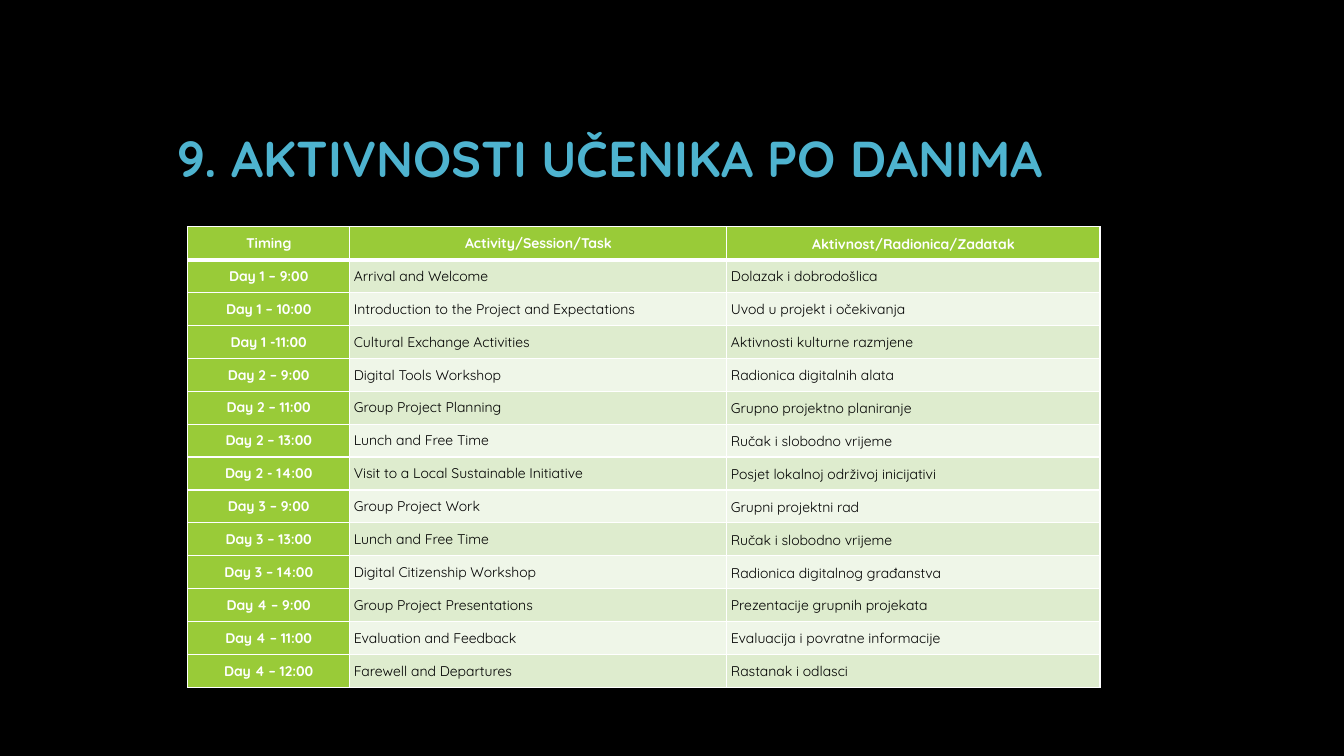
"""Build the slide with the table of student activities by day."""
from lxml import etree
from pptx import Presentation
from pptx.dml.color import RGBColor
from pptx.enum.text import MSO_ANCHOR, PP_ALIGN
from pptx.oxml.ns import qn
from pptx.util import Inches, Pt

MIDDLE, BOTTOM = MSO_ANCHOR.MIDDLE, MSO_ANCHOR.BOTTOM
LEFT, CENTER, JUSTIFY = PP_ALIGN.LEFT, PP_ALIGN.CENTER, PP_ALIGN.JUSTIFY
WHITE, BLACK, GREEN, BLUE = "FFFFFF", "000000", "99CB38", "4EB3CF"
BANDS = ["EFF6E8", "DEECCE"]


def paint(fill, color):
    fill.solid()
    fill.fore_color.rgb = RGBColor.from_string(color)


def write(frame, text, size, color, bold, align, spacing):
    para = frame.paragraphs[0]
    para.alignment, para.line_spacing = align, spacing
    run = para.add_run()
    run.text = text
    look = {"name": "Quicksand", "size": Pt(size), "bold": bold}
    for key, value in look.items():
        setattr(run.font, key, value)
    paint(run.font.fill, color)


deck = Presentation()
deck.slide_width, deck.slide_height = Inches(13.33), Inches(7.5)
slide = deck.slides.add_slide(deck.slide_layouts[6])
paint(slide.background.fill, BLACK)

title = slide.shapes.add_textbox(Inches(1.66), Inches(0.42), Inches(10), Inches(1.5))
frame = title.text_frame
frame.word_wrap = True
frame.vertical_anchor = BOTTOM
write(frame, "9. AKTIVNOSTI UČENIKA PO DANIMA", 36, BLUE, True, LEFT, 0.9)

rows = [
    ("Timing", "Activity/Session/Task", "Aktivnost/Radionica/Zadatak"),
    ("Day 1 – 9:00", "Arrival and Welcome", "Dolazak i dobrodošlica"),
    ("Day 1 – 10:00", "Introduction to the Project and Expectations", "Uvod u projekt i očekivanja"),
    ("Day 1 -11:00", "Cultural Exchange Activities", "Aktivnosti kulturne razmjene"),
    ("Day 2 – 9:00", "Digital Tools Workshop", "Radionica digitalnih alata"),
    ("Day 2 – 11:00", "Group Project Planning", "Grupno projektno planiranje"),
    ("Day 2 – 13:00", "Lunch and Free Time", "Ručak i slobodno vrijeme"),
    ("Day 2 - 14:00", "Visit to a Local Sustainable Initiative", "Posjet lokalnoj održivoj inicijativi"),
    ("Day 3 – 9:00", "Group Project Work", "Grupni projektni rad"),
    ("Day 3 – 13:00", "Lunch and Free Time", "Ručak i slobodno vrijeme"),
    ("Day 3 – 14:00", "Digital Citizenship Workshop", "Radionica digitalnog građanstva"),
    ("Day 4 – 9:00", "Group Project Presentations", "Prezentacije grupnih projekata"),
    ("Day 4 – 11:00", "Evaluation and Feedback", "Evaluacija i povratne informacije"),
    ("Day 4 – 12:00", "Farewell and Departures", "Rastanak i odlasci"),
]
widths = [1.61, 3.74, 3.7]
table = slide.shapes.add_table(
    len(rows), len(widths), Inches(1.86), Inches(2.25), Inches(sum(widths)), Inches(4.57)
).table
for col, width in zip(table.columns, widths):
    col.width = Inches(width)

margin = Inches(0.04)
format = {
    "vertical_anchor": MIDDLE,
    "margin_left": margin,
    "margin_right": margin,
    "margin_top": margin,
    "margin_bottom": margin,
}
for r, row in enumerate(rows):
    for c, text in enumerate(row):
        cell = table.cell(r, c)
        for key, value in format.items():
            setattr(cell, key, value)
        props = cell._tc.get_or_add_tcPr()
        for side in "LRTB":
            thick = (r, side) in [(0, "B"), (1, "T")]
            line = etree.SubElement(props, qn("a:ln" + side), w=str(Pt(3 if thick else 1)))
            solid = etree.SubElement(line, qn("a:solidFill"))
            etree.SubElement(solid, qn("a:srgbClr"), val=WHITE)
        head = r == 0 or c == 0
        paint(cell.fill, GREEN if head else BANDS[r % 2])
        align = CENTER if head else (LEFT, JUSTIFY)[c - 1]
        spacing = 1.07 if c == 2 else 1.0
        write(cell.text_frame, text, 10, WHITE if head else BLACK, head, align, spacing)

deck.save("out.pptx")
